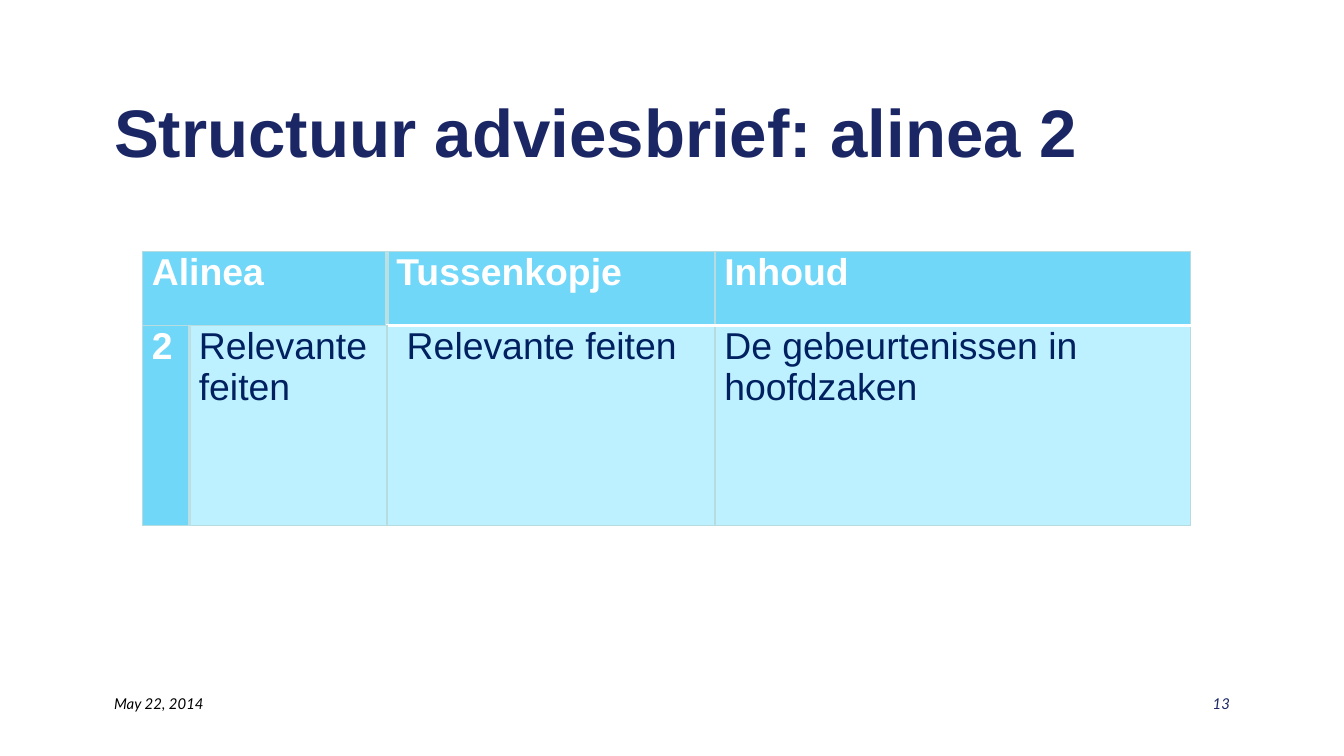
from lxml import etree
from pptx import Presentation
from pptx.dml.color import RGBColor
from pptx.enum.text import MSO_ANCHOR, MSO_AUTO_SIZE, PP_ALIGN
from pptx.oxml.ns import qn
from pptx.util import Inches, Pt

LEFT, RIGHT = PP_ALIGN.LEFT, PP_ALIGN.RIGHT
MIDDLE, TOP = MSO_ANCHOR.MIDDLE, MSO_ANCHOR.TOP
FIXED = MSO_AUTO_SIZE.NONE

TITLE = "Structuur adviesbrief: alinea 2"
ROWS = [
    ["Alinea", "", "Tussenkopje", "Inhoud"],
    ["2", "Relevante feiten", " Relevante feiten",
     "De gebeurtenissen in hoofdzaken"],
]
WIDTHS = [0.35, 1.47, 2.44, 3.54]
HEIGHTS = [0.55, 1.49]
FOOT = [("May 22, 2014", 0.75, "000000", LEFT), ("13", 7.17, "1B2764", RIGHT)]

HEAD = {"name": "Arial", "size": Pt(20), "bold": True}
BODY = {**HEAD, "bold": False}
BIG = {**HEAD, "size": Pt(36)}
SMALL = {"name": "Lato", "size": Pt(8), "italic": True}
DARK, PALE = "70D7F8", "BDF1FF"
THIN, THICK, WHITE = ("B6DCDF", 0.75), ("BBE0E3", 2), ("FFFFFF", 2)


def color(fill, code):
    """Set a solid colour from a hex string."""
    fill.solid()
    fill.fore_color.rgb = RGBColor.from_string(code)


def write(frame, text, look, code, align=LEFT, anchor=TOP):
    """Put one formatted paragraph in a text frame."""
    frame.word_wrap = True
    frame.vertical_anchor = anchor
    para = frame.paragraphs[0]
    para.alignment = align
    run = para.add_run()
    run.text = text
    for key, value in look.items():
        setattr(run.font, key, value)
    color(run.font.fill, code)


def border(cell, sides):
    """Draw the four borders of a cell."""
    props = cell._tc.get_or_add_tcPr()
    for side in "LRTB":
        code, width = sides.get(side, THIN)
        line = etree.SubElement(props, qn(f"a:ln{side}"), w=str(Pt(width)))
        fill = etree.SubElement(line, qn("a:solidFill"))
        etree.SubElement(fill, qn("a:srgbClr"), val=code)


def edges(row, col):
    """Give the borders of a cell that are not thin."""
    sides = {}
    if col > 1:
        sides["B" if row == 0 else "T"] = WHITE
    if (row, col) in [(0, 0), (0, 1), (1, 0)]:
        sides["R"] = THICK
    if (row, col) in [(0, 2), (1, 1)]:
        sides["L"] = THICK
    return sides


def build():
    """Build and save the slide."""
    deck = Presentation()
    deck.slide_width = Inches(10)
    deck.slide_height = deck.slide_width * 9 // 16
    slide = deck.slides.add_slide(deck.slide_layouts[5])

    title = slide.shapes.title
    title.left, title.top = Inches(0.75), Inches(0.5)
    title.width, title.height = Inches(8.5), Inches(0.94)
    write(title.text_frame, TITLE, BIG, "1B2764", anchor=MIDDLE)
    title.text_frame.auto_size = FIXED

    table = slide.shapes.add_table(
        len(ROWS), len(WIDTHS), Inches(1.06), Inches(1.87),
        Inches(sum(WIDTHS)), Inches(sum(HEIGHTS))).table
    for col, width in zip(table.columns, WIDTHS):
        col.width = Inches(width)
    for row, height in zip(table.rows, HEIGHTS):
        row.height = Inches(height)
    table.cell(0, 0).merge(table.cell(0, 1))
    for r, row in enumerate(ROWS):
        for c, text in enumerate(row):
            cell = table.cell(r, c)
            head = r == 0 or c == 0
            cell.margin_left = cell.margin_right = Inches(0.07)
            cell.margin_top = cell.margin_bottom = 0
            border(cell, edges(r, c))
            color(cell.fill, DARK if head else PALE)
            if text:
                write(cell.text_frame, text, HEAD if head else BODY,
                      "FFFFFF" if head else "002060")

    for text, left, code, align in FOOT:
        box = slide.shapes.add_textbox(
            Inches(left), Inches(5.12), Inches(2.08), Inches(0.38))
        write(box.text_frame, text, SMALL, code, align)
    deck.save("out.pptx")


if __name__ == "__main__":
    build()
